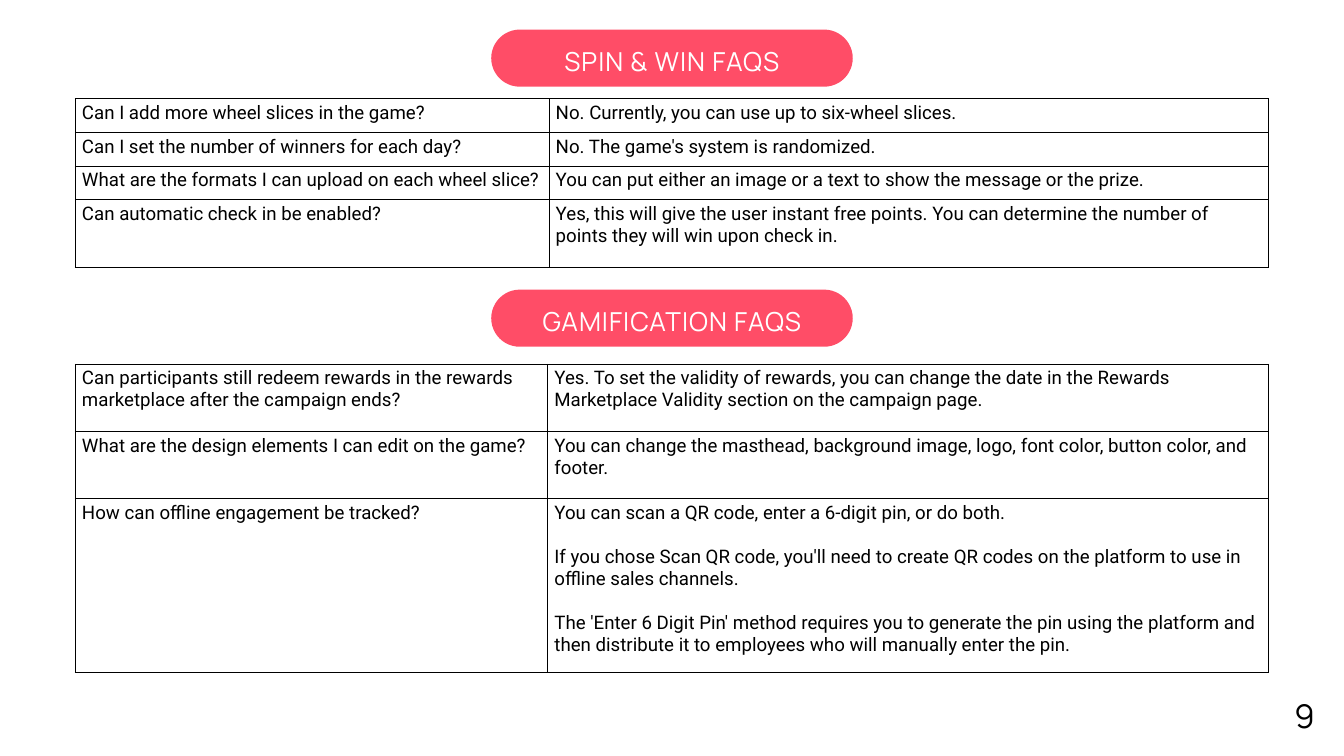
import pptx
import pptx.util
import pptx.dml.color
import pptx.enum.shapes
import pptx.enum.text
import pptx.oxml
import pptx.oxml.ns
from pptx.util import Inches

COLORS = {"pink": "FF4D67", "white": "FFFFFF", "black": "000000"}
WIDTH = 20

SPIN = [
    ("Can I add more wheel slices in the game?",
     ["No. Currently, you can use up to six-wheel slices."]),
    ("Can I set the number of winners for each day?",
     ["No. The game's system is randomized."]),
    ("What are the formats I can upload on each wheel slice?",
     ["You can put either an image or a text to show the message or the prize."]),
    ("Can automatic check in be enabled?",
     ["Yes, this will give the user instant free points. You can determine "
      "the number of points they will win upon check in."]),
]
GAMES = [
    ("Can participants still redeem rewards in the rewards marketplace "
     "after the campaign ends?",
     ["Yes. To set the validity of rewards, you can change the date in the "
      "Rewards Marketplace Validity section on the campaign page."]),
    ("What are the design elements I can edit on the game?",
     ["You can change the masthead, background image, logo, font color, "
      "button color, and footer."]),
    ("How can offline engagement be tracked?",
     ["You can scan a QR code, enter a 6-digit pin, or do both.",
      "If you chose Scan QR code, you'll need to create QR codes on the "
      "platform to use in offline sales channels.",
      "The 'Enter 6 Digit Pin' method requires you to generate the pin using "
      "the platform and then distribute it to employees who will manually "
      "enter the pin."]),
]


def paint(name):
    """Return the named colour."""
    return pptx.dml.color.RGBColor.from_string(COLORS[name])


def style(para, face, size, color):
    """Set the font of a paragraph."""
    para.font.name = face
    para.font.size = pptx.util.Pt(size)
    para.font.color.rgb = paint(color)


def inset(frame, size):
    """Give a text frame the same inset on all sides."""
    frame.margin_left = frame.margin_right = Inches(size)
    frame.margin_top = frame.margin_bottom = Inches(size)


def add_pill(slide, top):
    """Add a centred pink pill."""
    wide = 5.38
    pill = slide.shapes.add_shape(
        pptx.enum.shapes.MSO_SHAPE.ROUNDED_RECTANGLE,
        Inches((WIDTH - wide) / 2), Inches(top), Inches(wide), Inches(0.85))
    pill.adjustments[0] = 0.5
    pill.shadow.inherit = False
    pill.fill.solid()
    pill.fill.fore_color.rgb = paint("pink")
    pill.line.fill.background()
    return pill


def set_head(box, pill, text, wide):
    """Centre a heading over its pill."""
    high = Inches(3.05)
    box.left, box.width = Inches((WIDTH - wide) / 2), Inches(wide)
    box.top, box.height = pill.top + (pill.height - high) // 2, high
    frame = box.text_frame
    frame.word_wrap = True
    frame.auto_size = pptx.enum.text.MSO_AUTO_SIZE.NONE
    frame.vertical_anchor = pptx.enum.text.MSO_ANCHOR.MIDDLE
    inset(frame, 0.06)
    frame.text = text
    para = frame.paragraphs[0]
    para.alignment = pptx.enum.text.PP_ALIGN.CENTER
    para.line_spacing = pptx.util.Pt(39.2)
    style(para, "Manrope", 28, "white")
    for font in box.element.iter(pptx.oxml.ns.qn("a:defRPr")):
        font.set("spc", "110")
    pill.element.addnext(box.element)


def add_edges(cell):
    """Draw thin black borders round a cell."""
    props = cell._tc.get_or_add_tcPr()
    for side in "LRTB":
        props.append(pptx.oxml.parse_xml(
            f'<a:ln{side} {pptx.oxml.ns.nsdecls("a")} w="9525"><a:solidFill>'
            f'<a:srgbClr val="{COLORS["black"]}"/></a:solidFill></a:ln{side}>'))


def fill_cell(cell, texts):
    """Write paragraphs in a bordered cell, a line apart."""
    add_edges(cell)
    cell.fill.background()
    cell.text = "\n".join(texts)
    for spot, para in enumerate(cell.text_frame.paragraphs):
        style(para, "Roboto", 20, "black")
        if spot:
            para.space_before = pptx.util.Pt(23.5)


def add_faqs(slide, top, cols, rows, faqs):
    """Add a table of questions and answers."""
    table = slide.shapes.add_table(
        len(rows), len(cols), Inches(1.12), Inches(top),
        Inches(sum(cols)), Inches(sum(rows))).table
    table.first_row = table.horz_banding = False
    for col, wide in zip(table.columns, cols):
        col.width = Inches(wide)
    for row, high, (ask, reply) in zip(table.rows, rows, faqs):
        row.height = Inches(high)
        fill_cell(row.cells[0], [ask])
        fill_cell(row.cells[1], reply)


def add_page(slide, text):
    """Add the page number."""
    box = slide.shapes.add_textbox(
        Inches(19.26), Inches(10.02), Inches(0.31), Inches(0.87))
    frame = box.text_frame
    inset(frame, 0)
    frame.text = text
    para = frame.paragraphs[0]
    para.line_spacing = pptx.util.Pt(66.5)
    style(para, "Manrope", 35, "black")


def main():
    """Build and save the slide."""
    deck = pptx.Presentation()
    deck.slide_width, deck.slide_height = Inches(WIDTH), Inches(11.25)
    slide = deck.slides.add_slide(deck.slide_layouts[5])
    set_head(slide.shapes.title, add_pill(slide, 0.44), "SPIN & WIN FAQS", 4.61)
    add_faqs(slide, 1.47, [7.05, 10.71], [0.5, 0.5, 0.5, 1.01], SPIN)
    pill = add_pill(slide, 4.31)
    label = slide.shapes.add_textbox(0, 0, 0, 0)
    set_head(label, pill, "GAMIFICATION FAQS", 4.91)
    add_faqs(slide, 5.42, [7.03, 10.73], [1, 1, 2.59], GAMES)
    add_page(slide, "9")
    deck.save("out.pptx")


if __name__ == "__main__":
    main()
